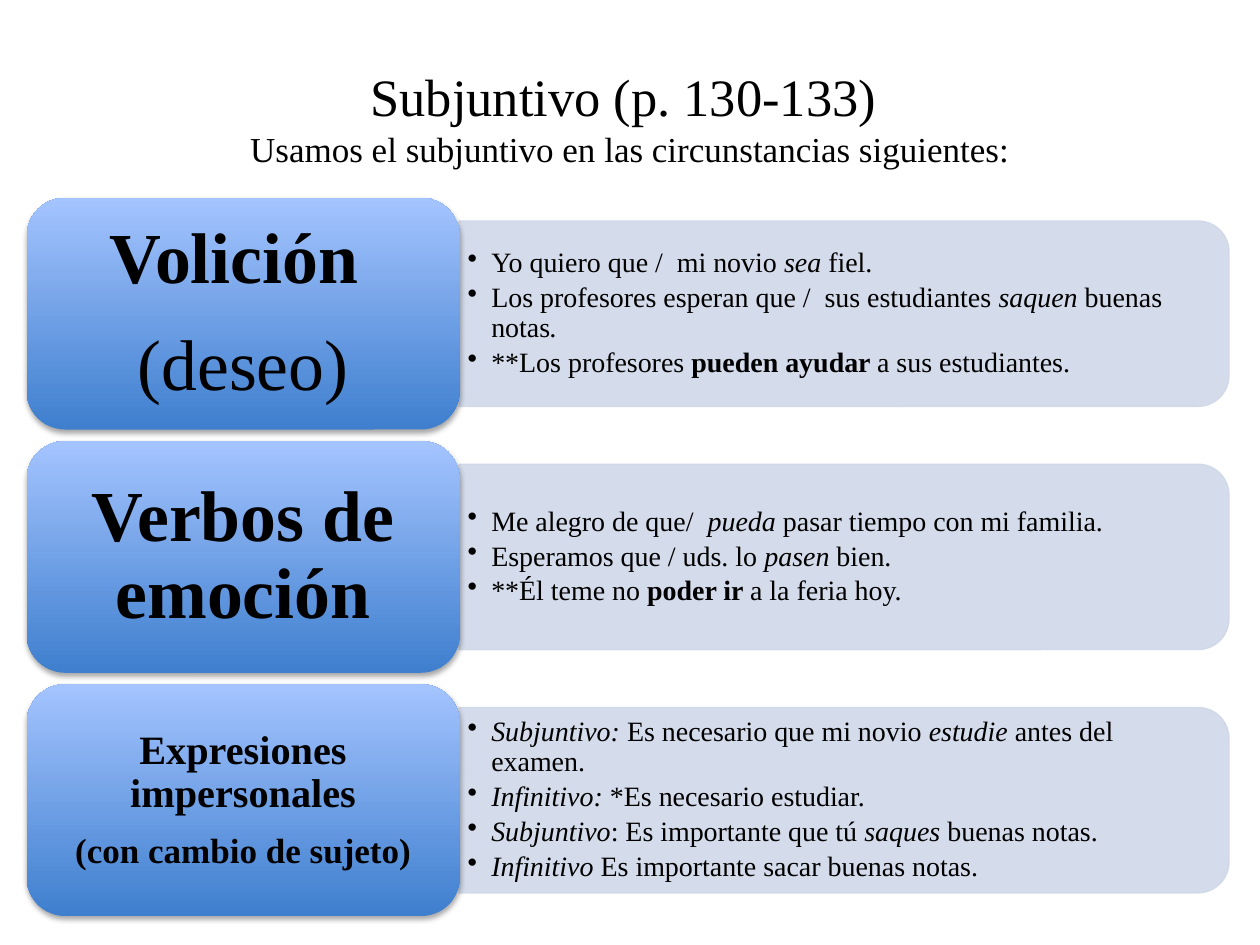
from lxml import etree
from pptx import Presentation
from pptx import util as u
from pptx.dml.color import RGBColor
from pptx.enum import shapes, text
from pptx.oxml.ns import qn

Pt = u.Pt
FONT = "Times New Roman"
COLORS = {"text": "000000", "panel": "D0D8E8", "dark": "3F7FCE", "light": "A4C4FF"}
PLAIN, BOLD, ITALIC = {}, {"bold": True}, {"italic": True}

TITLE = [("Subjuntivo (p. 130-133) ", 30),
         ("Usamos el subjuntivo en las circunstancias siguientes:", 20)]
SECTIONS = [
    {"label": [("Volición ", 41, BOLD), ("(deseo)", 41, PLAIN)],
     "inset": (12, 6.5),
     "examples": [
         [("Yo quiero que /  mi novio ", PLAIN), ("sea ", ITALIC), ("fiel.", PLAIN)],
         [("Los profesores esperan que /  sus estudiantes ", PLAIN), ("saquen ", ITALIC),
          ("buenas notas", PLAIN), (".", ITALIC)],
         [("**Los profesores ", PLAIN), ("pueden ayudar ", BOLD), ("a sus estudiantes.", PLAIN)],
     ]},
    {"label": [("Verbos de emoción", 41, BOLD)],
     "inset": (12, 6.5),
     "examples": [
         [("Me alegro de que/  ", PLAIN), ("pueda ", ITALIC),
          ("pasar tiempo con mi familia.", PLAIN)],
         [("Esperamos que / uds. lo ", PLAIN), ("pasen ", ITALIC), ("bien.", PLAIN)],
         [("**Él teme no ", PLAIN), ("poder ir ", BOLD), ("a la feria hoy.", PLAIN)],
     ]},
    {"label": [("Expresiones impersonales", 23, BOLD), ("(con cambio de sujeto)", 20, BOLD)],
     "inset": (7, 3.5),
     "examples": [
         [("Subjuntivo: ", ITALIC), ("Es necesario que mi novio ", PLAIN), ("estudie ", ITALIC),
          ("antes del examen.", PLAIN)],
         [("Infinitivo: ", ITALIC), ("*Es necesario estudiar.", PLAIN)],
         [("Subjuntivo", ITALIC), (": Es importante que tú ", PLAIN), ("saques ", ITALIC),
          ("buenas notas.", PLAIN)],
         [("Infinitivo ", ITALIC), ("Es importante sacar buenas notas.", PLAIN)],
     ]},
]

LEFT, TOP, PITCH = 15.2, 113, 139
LABEL_WIDTH, LABEL_HEIGHT, LABEL_PAD = 247.5, 132.5, 6.5
PANEL_LEFT, PANEL_WIDTH, PANEL_HEIGHT = 262.3, 440, 106
EXAMPLES_WIDTH, EXAMPLES_HEIGHT, EXAMPLE_SIZE = 435, 96, 16
INDENT = 13.5


def rgb(name):
    return RGBColor.from_string(COLORS[name])


def set_values(target, values):
    for name, value in values.items():
        setattr(target, name, value)


def add_run(paragraph, content, size, style=PLAIN):
    run = paragraph.add_run()
    run.text = content
    set_values(run.font, {"name": FONT, "size": Pt(size), **style})
    run.font.color.rgb = rgb("text")


def add_child(parent, tag, **attributes):
    return etree.SubElement(parent, qn(tag), attributes)


def add_text_box(group, box, inset):
    frame = group.shapes.add_textbox(*map(Pt, box)).text_frame
    horizontal, vertical = map(Pt, inset)
    set_values(frame, {"word_wrap": True, "vertical_anchor": text.MSO_ANCHOR.MIDDLE,
                       "margin_left": horizontal, "margin_right": horizontal,
                       "margin_top": vertical, "margin_bottom": vertical})
    return frame


def paragraphs(frame, items, values):
    for index, item in enumerate(items):
        paragraph = frame.add_paragraph() if index else frame.paragraphs[0]
        set_values(paragraph, {"line_spacing": 0.9, **values})
        yield paragraph, item


def add_panel(group, middle):
    shape = group.shapes.add_shape(
        shapes.MSO_SHAPE.ROUND_2_SAME_RECTANGLE,
        Pt(PANEL_LEFT + (PANEL_WIDTH - PANEL_HEIGHT) / 2), Pt(middle - PANEL_WIDTH / 2),
        Pt(PANEL_HEIGHT), Pt(PANEL_WIDTH))
    shape.rotation = 90
    shape.shadow.inherit = False
    shape.line.width = Pt(0.75)
    for fill in (shape.fill, shape.line.fill):
        fill.solid()
        fill.fore_color.rgb = rgb("panel")
    for color in shape.element.spPr.iter(qn("a:srgbClr")):
        add_child(color, "a:alpha", val="90000")


def add_examples(group, middle, examples):
    box = (PANEL_LEFT, middle - EXAMPLES_HEIGHT / 2, EXAMPLES_WIDTH, EXAMPLES_HEIGHT)
    frame = add_text_box(group, box, (5, 2.5))
    values = {"level": 1, "space_after": Pt(2.7), "alignment": text.PP_ALIGN.LEFT}
    for paragraph, runs in paragraphs(frame, examples, values):
        properties = paragraph._p.get_or_add_pPr()
        properties.set("marL", str(Pt(INDENT)))
        properties.set("indent", str(-Pt(INDENT)))
        add_child(properties, "a:buChar", char="•")
        for content, style in runs:
            add_run(paragraph, content, EXAMPLE_SIZE, style)


def add_label(group, top, label, inset):
    box = (LEFT, top, LABEL_WIDTH, LABEL_HEIGHT)
    shape = group.shapes.add_shape(shapes.MSO_SHAPE.ROUNDED_RECTANGLE, *map(Pt, box))
    shape.line.fill.background()
    shape.fill.gradient()
    shape.fill.gradient_angle = 90
    for stop, name in zip(shape.fill.gradient_stops, ("dark", "light")):
        stop.color.rgb = rgb(name)
    shape.shadow.inherit = False
    effects = shape.element.spPr.find(qn("a:effectLst"))
    shadow = add_child(effects, "a:outerShdw", blurRad=str(Pt(3.1)), dist=str(Pt(1.8)),
                       dir="5400000", rotWithShape="0")
    color = add_child(shadow, "a:srgbClr", val=COLORS["text"])
    add_child(color, "a:alpha", val="35000")

    text_box = (LEFT + LABEL_PAD, top + LABEL_PAD,
                LABEL_WIDTH - 2 * LABEL_PAD, LABEL_HEIGHT - 2 * LABEL_PAD)
    frame = add_text_box(group, text_box, inset)
    values = {"alignment": text.PP_ALIGN.CENTER}
    for paragraph, (content, size, style) in paragraphs(frame, label, values):
        paragraph.space_after = Pt(size * 0.4)
        add_run(paragraph, content, size, style)


def add_title(slide):
    title = slide.shapes.title
    set_values(title, {"left": Pt(36), "top": Pt(21.6), "width": Pt(648), "height": Pt(90)})
    title.text_frame.vertical_anchor = text.MSO_ANCHOR.MIDDLE
    paragraph = title.text_frame.paragraphs[0]
    paragraph.alignment = text.PP_ALIGN.CENTER
    for index, (content, size) in enumerate(TITLE):
        if index:
            paragraph.add_line_break()
        add_run(paragraph, content, size)


def main():
    presentation = Presentation()
    set_values(presentation, {"slide_width": Pt(720), "slide_height": Pt(540)})
    slide = presentation.slides.add_slide(presentation.slide_layouts[5])
    add_title(slide)
    group = slide.shapes.add_group_shape()
    for index, section in enumerate(SECTIONS):
        top = TOP + index * PITCH
        middle = top + LABEL_HEIGHT / 2
        add_panel(group, middle)
        add_examples(group, middle, section["examples"])
        add_label(group, top, section["label"], section["inset"])
    presentation.save("out.pptx")


if __name__ == "__main__":
    main()
